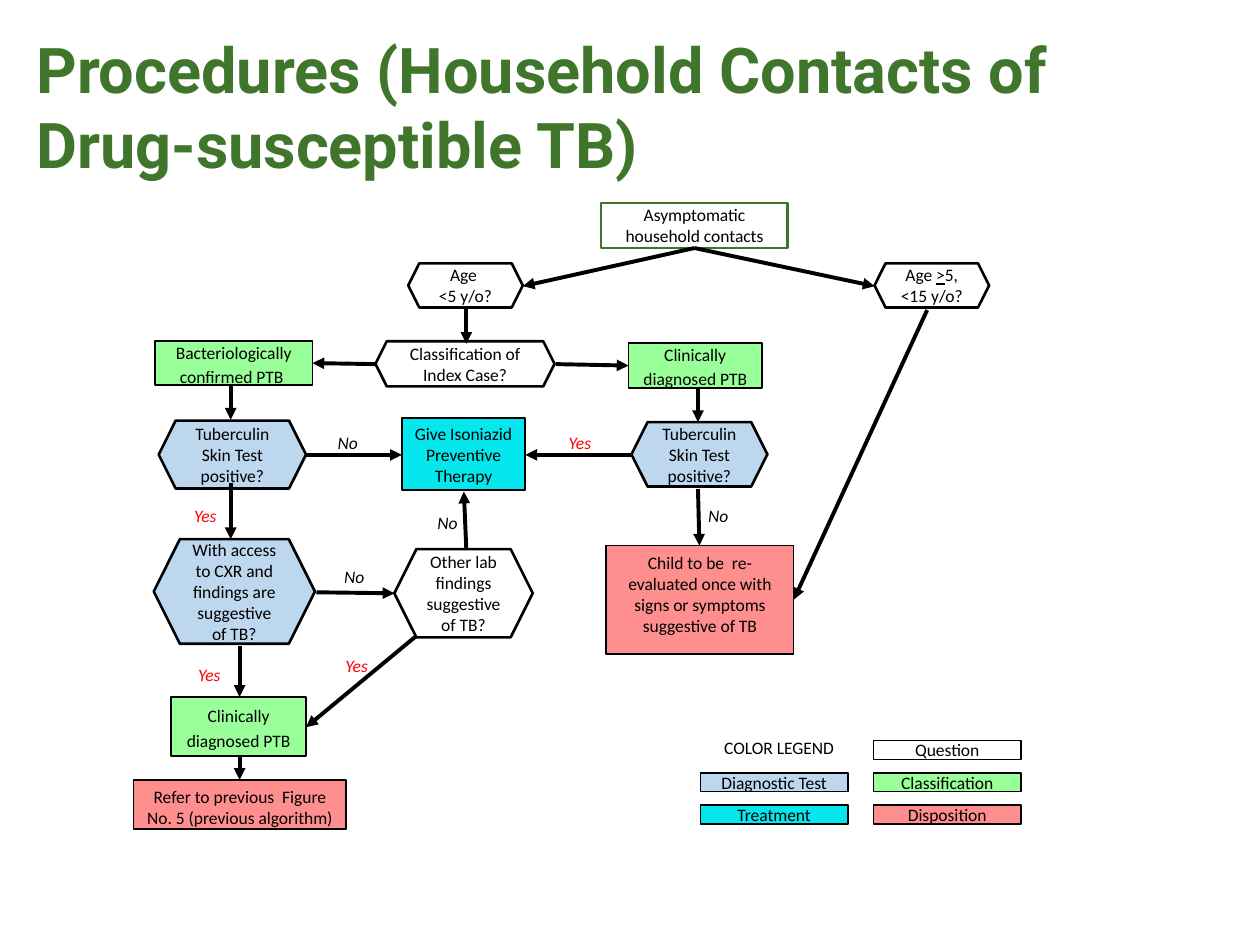
from dataclasses import dataclass

from lxml.etree import SubElement
from pptx import Presentation
from pptx.dml.color import RGBColor
from pptx.enum.shapes import MSO_CONNECTOR, MSO_SHAPE
from pptx.enum.text import MSO_ANCHOR, MSO_AUTO_SIZE, PP_ALIGN
from pptx.oxml.ns import qn
from pptx.util import Cm, Pt


@dataclass(frozen=True)
class Theme:
    heading_font: str = "Roboto"
    body_font: str = "Calibri"
    heading_size: int = 36
    body_size: int = 10
    heading: str = "3F762B"
    start_outline: str = "3E752A"
    ink: str = "000000"
    yes: str = "FF0000"
    white: str = "FFFFFF"
    diagnostic: str = "BDD7EE"
    treatment: str = "03E7ED"
    classification: str = "99FF99"
    disposition: str = "FF8F8F"
    thin: float = 1
    outline: float = 1.5
    arrow: float = 2.25


THEME = Theme()


@dataclass(frozen=True)
class Kind:
    fill: str
    preset: MSO_SHAPE = MSO_SHAPE.RECTANGLE
    outline: str = THEME.ink
    weight: float = THEME.thin
    anchor: MSO_ANCHOR = MSO_ANCHOR.MIDDLE
    line_spacing: float = 1.0
    space_after: float = 0


START = Kind(THEME.white, outline=THEME.start_outline, weight=THEME.outline)
QUESTION = Kind(THEME.white, MSO_SHAPE.HEXAGON, weight=THEME.outline)
DIAGNOSTIC = Kind(THEME.diagnostic, MSO_SHAPE.HEXAGON, weight=THEME.outline)
TREATMENT = Kind(THEME.treatment)
CLASSIFICATION = Kind(THEME.classification, line_spacing=1.15, space_after=10)
DISPOSITION = Kind(THEME.disposition, anchor=MSO_ANCHOR.TOP, space_after=10)

NODES = [
    (START, "Asymptomatic household contacts", 12.12, 4.09, 3.76, 0.91),
    (QUESTION, "Age \n<5 y/o?", 8.23, 5.31, 2.31, 0.89),
    (QUESTION, "Classification of Index Case?", 7.57, 6.88, 3.61, 0.91),
    (CLASSIFICATION, "Bacteriologically confirmed PTB ", 3.12, 6.88, 3.18, 0.89),
    (CLASSIFICATION, "Clinically diagnosed PTB", 12.67, 6.91, 2.69, 0.91),
    (DIAGNOSTIC, "Tuberculin Skin Test positive?", 3.2, 8.48, 2.97, 1.37),
    (DIAGNOSTIC, "Tuberculin Skin Test positive?", 12.73, 8.51, 2.74, 1.3),
    (TREATMENT, "Give Isoniazid Preventive Therapy", 8.1, 8.43, 2.49, 1.45),
    (DIAGNOSTIC, "With access to CXR and findings are suggestive of TB?",
     3.1, 10.87, 3.25, 2.11),
    (QUESTION, "Other lab findings suggestive of TB?", 7.95, 11.07, 2.79, 1.78),
    (DISPOSITION, "Child to be  re-evaluated once with signs or symptoms suggestive of TB",
     12.22, 11, 3.78, 2.18),
    (CLASSIFICATION, "Clinically diagnosed PTB", 3.45, 14.05, 2.72, 1.19),
    (DISPOSITION, "Refer to previous  Figure No. 5 (previous algorithm)",
     2.69, 15.72, 4.29, 0.99),
]

ARROWS = [
    (14, 5, 10.54, 5.77),
    (14, 5, 17.63, 5.77),
    (9.4, 6.22, 9.4, 6.93),
    (7.57, 7.34, 6.3, 7.32),
    (11.2, 7.34, 12.67, 7.37),
    (4.65, 7.77, 4.65, 8.46),
    (14.07, 7.8, 14.07, 8.51),
    (6.15, 9.17, 8.1, 9.17),
    (12.73, 9.17, 10.59, 9.17),
    (4.65, 9.73, 4.65, 10.87),
    (14.07, 9.86, 14.1, 11),
    (9.4, 11.07, 9.35, 9.91),
    (6.38, 11.94, 7.95, 11.96),
    (8.38, 12.83, 6.17, 14.66),
    (4.83, 13.03, 4.83, 14.05),
    (4.83, 15.24, 4.83, 15.72),
    (18.69, 6.25, 16, 12.09),
]

ANSWERS = {
    "No": [(6.45, 8.59), (13.92, 10.06), (8.46, 10.19), (6.58, 11.28)],
    "Yes": [(11.13, 8.59), (3.66, 13.26), (3.58, 10.06), (6.63, 13.08)],
}

LEGEND = [
    ("Question", THEME.white, 1, 0),
    ("Diagnostic Test", THEME.diagnostic, 0, 1),
    ("Classification", THEME.classification, 1, 1),
    ("Treatment", THEME.treatment, 0, 2),
    ("Disposition", THEME.disposition, 1, 2),
]


class Flowchart:
    """Draws the elements of a themed flowchart on one slide."""

    def __init__(self, slide, theme):
        self.slide = slide
        self.theme = theme

    def title(self, wording, left, top, width, height):
        heading = self.slide.shapes.title
        heading.left, heading.top = Cm(left), Cm(top)
        heading.width, heading.height = Cm(width), Cm(height)
        frame = heading.text_frame
        frame.text = wording
        frame.auto_size = MSO_AUTO_SIZE.NONE
        frame.vertical_anchor = MSO_ANCHOR.TOP
        paragraph = frame.paragraphs[0]
        paragraph.alignment = PP_ALIGN.LEFT
        font = paragraph.font
        font.name, font.size = self.theme.heading_font, Pt(self.theme.heading_size)
        font.bold = True
        font.color.rgb = RGBColor.from_string(self.theme.heading)

    def style(self, paragraph, color, italic=False):
        paragraph.alignment = PP_ALIGN.CENTER
        font = paragraph.font
        font.name, font.size = self.theme.body_font, Pt(self.theme.body_size)
        font.italic = italic
        font.color.rgb = RGBColor.from_string(color)

    def node(self, kind, wording, left, top, width, height, underlined=None):
        step = self.slide.shapes.add_shape(
            kind.preset, Cm(left), Cm(top), Cm(width), Cm(height))
        step.shadow.inherit = False
        step.fill.solid()
        step.fill.fore_color.rgb = RGBColor.from_string(kind.fill)
        step.line.color.rgb = RGBColor.from_string(kind.outline)
        step.line.width = Pt(kind.weight)
        frame = step.text_frame
        frame.text = wording
        frame.word_wrap = True
        frame.vertical_anchor = kind.anchor
        for paragraph in frame.paragraphs:
            paragraph.line_spacing = kind.line_spacing
            paragraph.space_after = Pt(kind.space_after)
            self.style(paragraph, self.theme.ink)
        if underlined:
            self.underline(frame.paragraphs[0], underlined)

    def underline(self, paragraph, mark):
        parts = paragraph.text.partition(mark)
        paragraph.runs[0].text = parts[0]
        for part in parts[1:]:
            run = paragraph.add_run()
            run.text = part
            run.font.underline = part == mark

    def label(self, wording, left, top, width, color, italic=False):
        caption = self.slide.shapes.add_textbox(
            Cm(left), Cm(top), Cm(width), Cm(0.69))
        frame = caption.text_frame
        frame.text = wording
        frame.word_wrap = True
        frame.auto_size = MSO_AUTO_SIZE.SHAPE_TO_FIT_TEXT
        self.style(frame.paragraphs[0], color, italic)

    def arrow(self, *ends):
        link = self.slide.shapes.add_connector(
            MSO_CONNECTOR.STRAIGHT, *(Cm(end) for end in ends))
        link.line.color.rgb = RGBColor.from_string(self.theme.ink)
        link.line.width = Pt(self.theme.arrow)
        SubElement(link.line._get_or_add_ln(), qn("a:tailEnd"), type="triangle")
        SubElement(link._element.spPr, qn("a:effectLst"))


def main():
    deck = Presentation()
    deck.slide_width, deck.slide_height = Cm(25.4), Cm(19.05)
    chart = Flowchart(deck.slides.add_slide(deck.slide_layouts[5]), THEME)
    chart.title("Procedures (Household Contacts of Drug-susceptible TB)",
                0.48, 0.48, 22.02, 1.85)
    for node in NODES:
        chart.node(*node)
    chart.node(QUESTION, "Age >5,\n<15 y/o?", 17.63, 5.31, 2.31, 0.89, underlined=">")
    for arrow in ARROWS:
        chart.arrow(*arrow)
    for answer, places in ANSWERS.items():
        color = THEME.yes if answer == "Yes" else THEME.ink
        for left, top in places:
            chart.label(answer, left, top, 1.12, color, italic=True)
    chart.label("COLOR LEGEND", 13.56, 14.73, 4.29, THEME.ink)
    for meaning, fill, column, row in LEGEND:
        chart.node(Kind(fill), meaning, 14.12 + 3.49 * column,
                   14.93 + 0.65 * row, 2.97, 0.38)
    deck.save("out.pptx")


if __name__ == "__main__":
    main()
